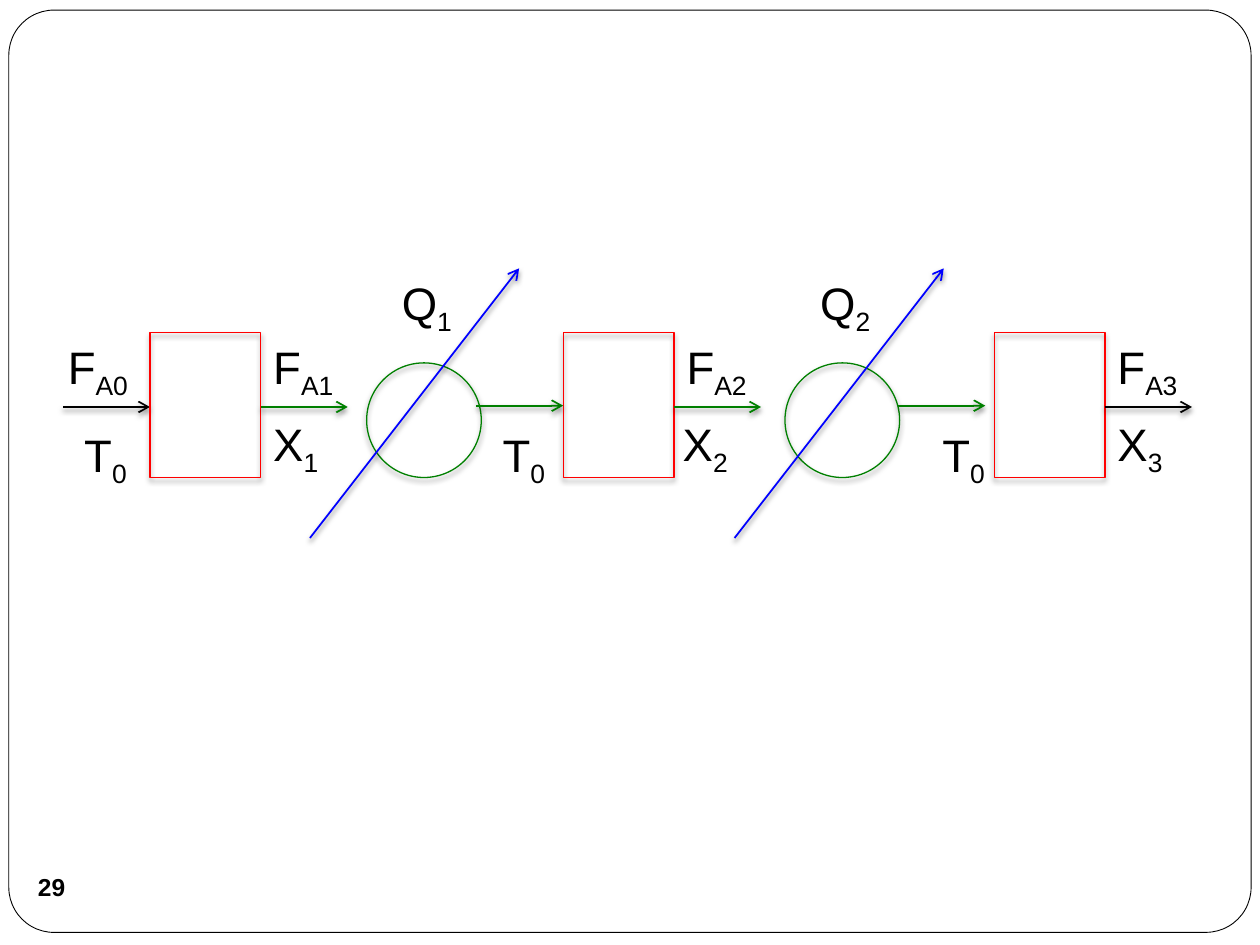
from lxml.etree import SubElement
from pptx import Presentation
from pptx.dml.color import RGBColor
from pptx.enum.shapes import MSO_CONNECTOR, MSO_SHAPE
from pptx.enum.text import MSO_ANCHOR, PP_ALIGN
from pptx.oxml.ns import qn
from pptx.util import Inches, Pt

COLORS = {"ink": "000000", "paper": "FFFFFF", "tank": "FF0000",
          "cool": "008000", "heat": "0000FF"}
FONT = "Arial"


def color(name):
    return RGBColor.from_string(COLORS[name])


def add_shadow(shape):
    """Soft shadow that falls straight down."""
    props = shape._element.spPr
    for old in props.findall(qn("a:effectLst")):
        props.remove(old)
    effects = SubElement(props, qn("a:effectLst"))
    outer = SubElement(effects, qn("a:outerShdw"), blurRad=str(Pt(3)),
                       dist=str(Pt(2)), dir="5400000", rotWithShape="0")
    tint = SubElement(outer, qn("a:srgbClr"), val=COLORS["ink"])
    SubElement(tint, qn("a:alpha"), val="50000")


def add_shape(slide, kind, left, top, width, height, line=None, fill=None,
              weight=0.75):
    shape = slide.shapes.add_shape(kind, Inches(left), Inches(top),
                                   Inches(width), Inches(height))
    shape.shadow.inherit = False
    if fill:
        shape.fill.solid()
        shape.fill.fore_color.rgb = color(fill)
    else:
        shape.fill.background()
    if line:
        shape.line.color.rgb = color(line)
        shape.line.width = Pt(weight)
    else:
        shape.line.fill.background()
    return shape


def add_arrow(slide, x1, y1, x2, y2, tint):
    arrow = slide.shapes.add_connector(MSO_CONNECTOR.STRAIGHT, Inches(x1),
                                       Inches(y1), Inches(x2), Inches(y2))
    arrow.line.color.rgb = color(tint)
    arrow.line.width = Pt(1)
    SubElement(arrow.line._get_or_add_ln(), qn("a:tailEnd"), type="arrow")
    add_shadow(arrow)


def add_label(slide, left, top, letter, index):
    """Letter with a subscript."""
    box = slide.shapes.add_textbox(Inches(left), Inches(top),
                                   Inches(1.02), Inches(0.54))
    box.text_frame.word_wrap = True
    para = box.text_frame.paragraphs[0]
    para.font.name = FONT
    para.font.size = Pt(26)
    para.font.color.rgb = color("ink")
    para.add_run().text = letter
    low = para.add_run()
    low.text = index
    low._r.get_or_add_rPr().set("baseline", "-25000")


def add_stream(slide, left, top, tint):
    add_arrow(slide, left, top, left + 0.69, top, tint)


def add_tank(slide, left, top, number, tint, shift=0):
    """Reactor with its outlet stream and labels."""
    width = 0.88
    right = left + width
    tank = add_shape(slide, MSO_SHAPE.RECTANGLE, left, top, width, 1.15, "tank")
    add_shadow(tank)
    add_stream(slide, right, top + 0.59, tint)
    add_label(slide, right, top, "F", f"A{number}")
    add_label(slide, right + shift, top + 0.61, "X", number)


def add_cooler(slide, left, top, number, ray, out, label, inlet):
    """Heat exchanger; ray, out, label and inlet are offsets from left."""
    size = 0.91
    ring = add_shape(slide, MSO_SHAPE.OVAL, left, top, size, size, "cool")
    add_shadow(ring)
    add_stream(slide, left + out, top + 0.34, "cool")
    start = left + ray
    add_arrow(slide, start, top + 1.39, start + 1.66, top - 0.75, "heat")
    add_label(slide, left + label, top - 0.75, "Q", number)
    add_label(slide, left + inlet, top + 0.46, "T", "0")


def add_feed(slide, left, top):
    add_stream(slide, left + 0.06, top + 0.59, "ink")
    add_label(slide, left, top, "F", "A0")
    add_label(slide, left + 0.13, top + 0.7, "T", "0")


def add_frame(slide, left, top, width, height):
    """Rounded border and page number."""
    frame = add_shape(slide, MSO_SHAPE.ROUNDED_RECTANGLE, left, top, width,
                      height, "ink", "paper", 0.5)
    frame.adjustments[0] = 0.049
    badge = add_shape(slide, MSO_SHAPE.OVAL, left + 0.09, top + height - 0.61,
                      0.5, 0.5, fill="paper")
    text = badge.text_frame
    text.margin_left = text.margin_right = 0
    text.margin_top = text.margin_bottom = 0
    text.word_wrap = False
    text.vertical_anchor = MSO_ANCHOR.MIDDLE
    para = text.paragraphs[0]
    para.text = "29"
    para.alignment = PP_ALIGN.CENTER
    para.font.name = FONT
    para.font.size = Pt(14)
    para.font.bold = True
    para.font.color.rgb = color("ink")


def main():
    deck = Presentation()
    deck.slide_width, deck.slide_height = Inches(10), Inches(7.5)
    slide = deck.slides.add_slide(deck.slide_layouts[6])
    add_frame(slide, 0.07, 0.08, 9.86, 7.32)

    # Reactors in series with cooling between them
    top = 2.64
    add_feed(slide, 0.44, top)
    add_tank(slide, 1.19, top, "1", "cool")
    add_cooler(slide, 2.91, top + 0.24, "1", -0.45, 0.87, 0.18, 0.98)
    add_tank(slide, 4.47, top, "2", "cool", -0.03)
    add_cooler(slide, 6.23, top + 0.24, "2", -0.4, 0.9, 0.18, 1.15)
    add_tank(slide, 7.89, top, "3", "ink")
    deck.save("out.pptx")


if __name__ == "__main__":
    main()
